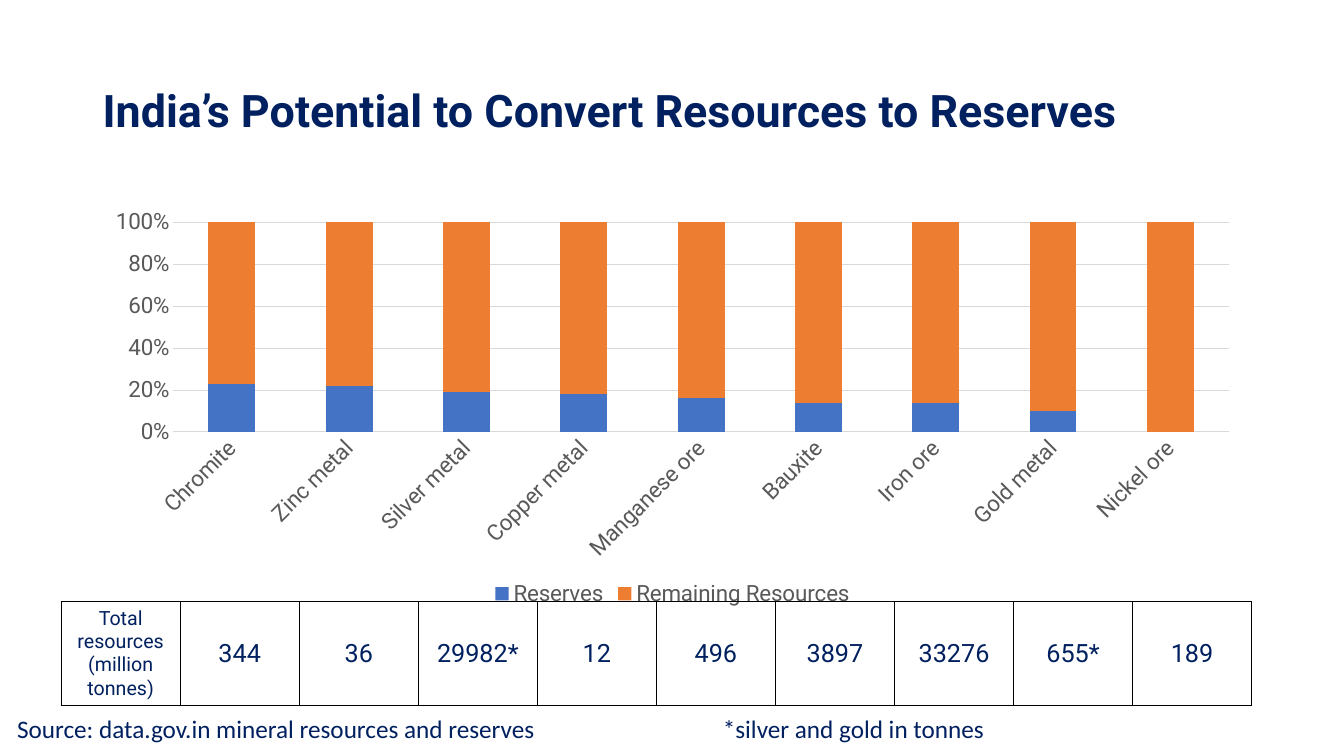
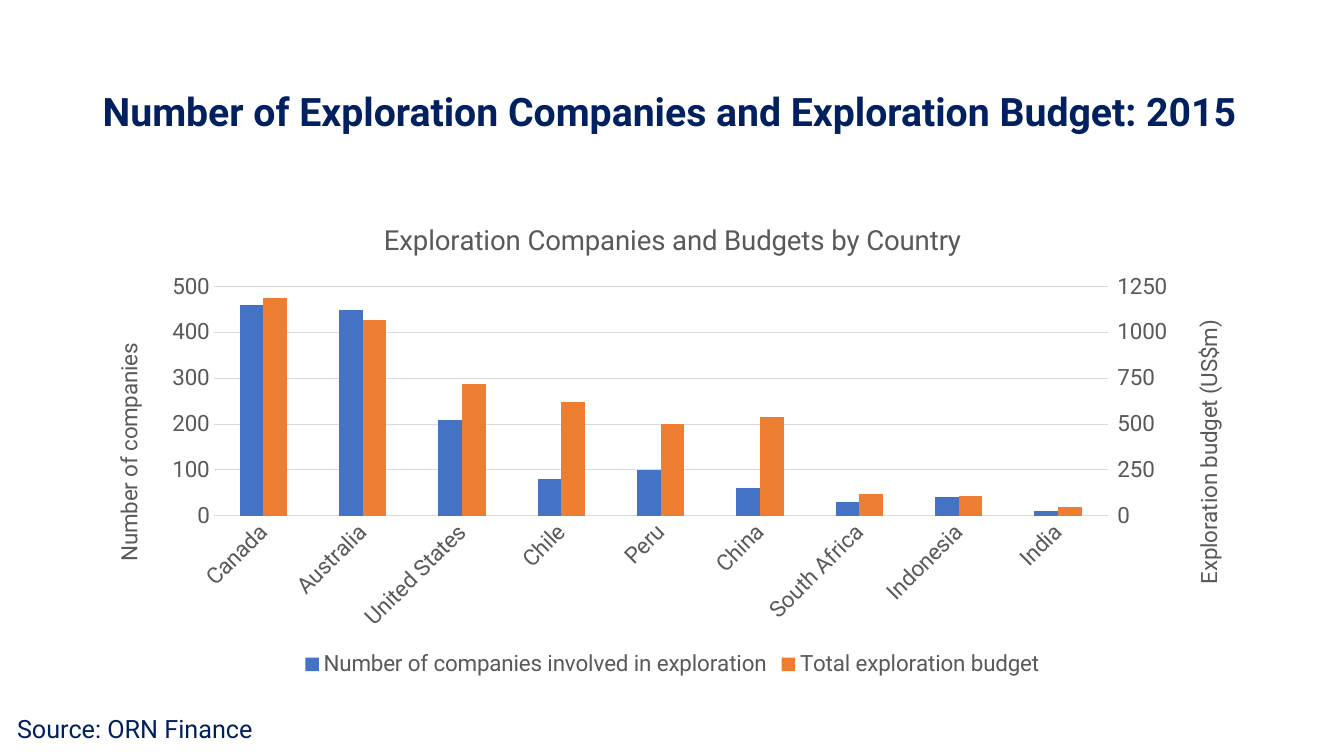
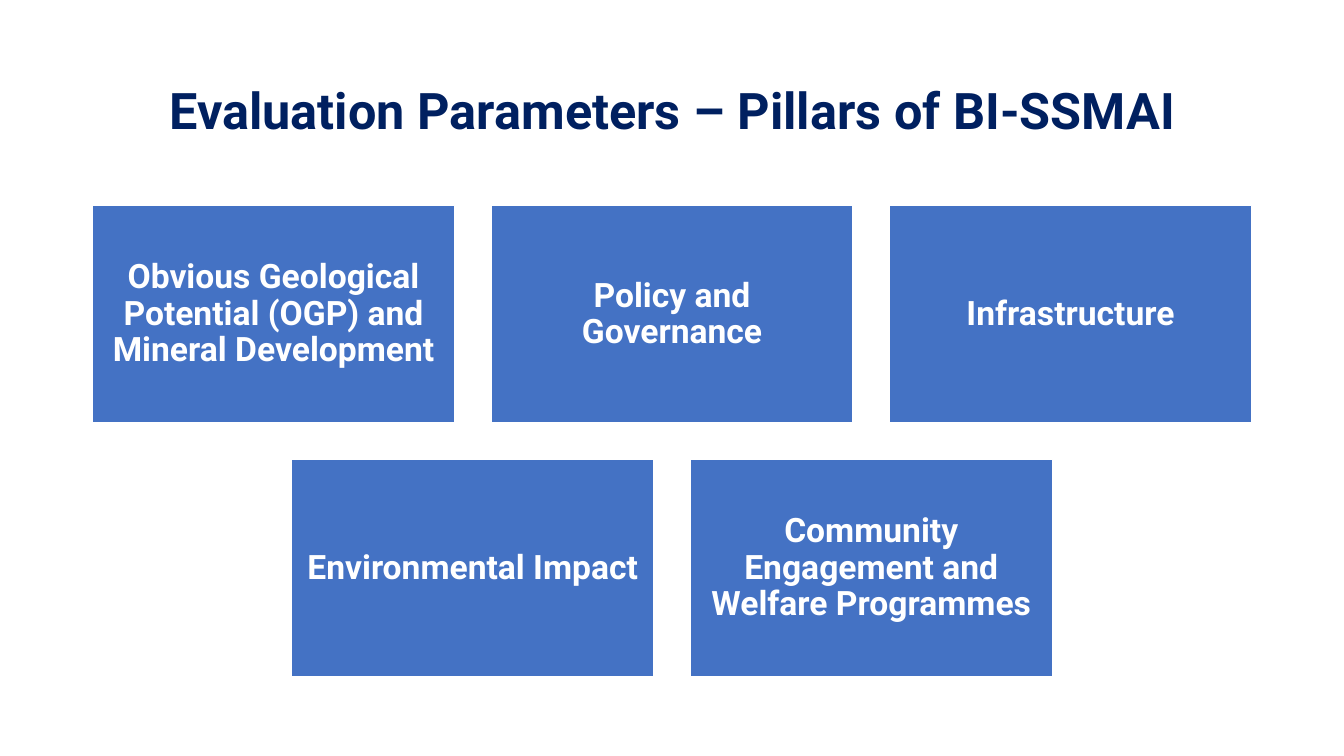
from copy import deepcopy

from pptx import Presentation, util as u
from pptx.chart.axis import ValueAxis
from pptx.chart.data import CategoryChartData
from pptx.dml.color import RGBColor
from pptx.enum import chart as ch, shapes, text
from pptx.oxml import parse_xml
from pptx.oxml.ns import nsdecls

WIDE, HIGH = u.Inches(13.33), u.Inches(7.5)
SIDE, SPAN = 6.9, 86.27
NAVY, BLUE, AMBER = "002060", "4472C4", "ED7D31"
GREY, RULE, WHITE, BLACK = "595959", "D9D9D9", "FFFFFF", "000000"
FACE = "Roboto"
MID = text.PP_ALIGN.CENTER


def rgb(code):
    """Turn a hex string into a colour."""
    return RGBColor.from_string(code)


def area(x, y, w, h):
    """Turn percent shares of the slide into left, top, width and height."""
    return [int(v * full / 100) for v, full in zip((x, y, w, h), (WIDE, HIGH) * 2)]


def style(font, size, code=NAVY, bold=False, face=FACE):
    """Set size, colour, weight and face of a font."""
    font.size, font.bold, font.name = u.Pt(size), bold, face
    font.color.rgb = rgb(code)


def write(frame, words, size, align=None, lines=None, **look):
    """Fill a text frame with one vertically centred paragraph."""
    frame.word_wrap = True
    frame.vertical_anchor = text.MSO_ANCHOR.MIDDLE
    frame.text = words
    para = frame.paragraphs[0]
    para.alignment, para.line_spacing = align, lines
    for run in para.runs:
        style(run.font, size, **look)


def head(slide, words, size, align=None):
    """Add the slide title."""
    box = slide.shapes.add_textbox(*area(SIDE, 5.33, SPAN, 19.33))
    write(box.text_frame, words, size, align, 0.9, bold=True)


def source(slide, words, width, face=FACE, stop=None):
    """Add the source line, with a tab stop in inches if given."""
    box = slide.shapes.add_textbox(*area(0.53, 93.7, width, 5.33))
    write(box.text_frame, words, 18, face=face)
    if stop:
        tabs = parse_xml(f'<a:tabLst {nsdecls("a")}><a:tab pos="{u.Inches(stop)}" algn="l"/></a:tabLst>')
        box.text_frame.paragraphs[0]._p.get_or_add_pPr().append(tabs)


def name(axis, words):
    """Give an axis its title."""
    frame = axis.axis_title.text_frame
    frame.text = words
    style(frame.paragraphs[0].runs[0].font, 16, GREY)


def scale(axis, top, step):
    """Set the range and step of a value axis."""
    axis.minimum_scale, axis.maximum_scale, axis.major_unit = 0, top, step


def columns(slide, kind, height, cats, series, gap, overlap):
    """Add a column chart from (name, values, colour) series."""
    data = CategoryChartData()
    data.categories = cats
    for label, vals, _ in series:
        data.add_series(label, vals)
    chart = slide.shapes.add_chart(kind, *area(SIDE, 26.67, SPAN, height), data).chart
    style(chart.font, 16, GREY)
    chart.has_title = False
    chart.has_legend = True
    chart.legend.position = ch.XL_LEGEND_POSITION.BOTTOM
    chart.legend.include_in_layout = False
    style(chart.legend.font, 16, GREY)
    plot = chart.plots[0]
    plot.gap_width, plot.overlap, plot.vary_by_categories = gap, overlap, False
    for item, (_, _, code) in zip(plot.series, series):
        item.format.fill.solid()
        item.format.fill.fore_color.rgb = rgb(code)
    cat, val = chart.category_axis, chart.value_axis
    for axis in (cat, val):
        axis.major_tick_mark = axis.minor_tick_mark = ch.XL_TICK_MARK.NONE
        style(axis.tick_labels.font, 16, GREY)
    for line in (cat.format.line, val.major_gridlines.format.line):
        line.color.rgb, line.width = rgb(RULE), u.Pt(0.75)
    val.format.line.fill.background()
    chart.element.xpath(".//c:catAx/c:txPr/a:bodyPr")[0].set("rot", "-2700000")
    return chart


def split(chart, count):
    """Move the series after the first few to a right axis and return it."""
    bar, cat, val = (chart.element.xpath(f".//c:{tag}")[0] for tag in ("barChart", "catAx", "valAx"))
    twin, under, right = deepcopy(bar), deepcopy(cat), deepcopy(val)
    bar.addnext(twin)
    val.addnext(right)
    right.addnext(under)
    for ser in bar.xpath("c:ser")[count:]:
        bar.remove(ser)
    for ser in twin.xpath("c:ser")[:count]:
        twin.remove(ser)
    for part in (twin, under, right):
        for node in part.xpath("c:axId | c:crossAx"):
            node.set("val", str(int(node.get("val")) + 1))
    under.xpath("c:delete")[0].set("val", "1")
    right.xpath("c:axPos")[0].set("val", "r")
    right.xpath("c:crosses")[0].set("val", "max")
    axis = ValueAxis(right)
    axis.has_major_gridlines = False
    axis.major_tick_mark = ch.XL_TICK_MARK.OUTSIDE
    return axis


def mute(chart, *spots):
    """Leave the series at these places out of the legend."""
    for spot in reversed(spots):
        entry = f'<c:legendEntry {nsdecls("c")}><c:idx val="{spot}"/><c:delete val="1"/></c:legendEntry>'
        chart.element.xpath(".//c:legendPos")[0].addnext(parse_xml(entry))


def totals(slide, label, vals):
    """Add the one-row table of totals."""
    spot = area(4.55, 79.55, 88.6, 13.73)
    table = slide.shapes.add_table(1, len(vals) + 1, *spot).table
    table.first_row = table.horz_banding = False
    for at, (cell, words) in enumerate(zip(table.rows[0].cells, [label, *vals])):
        write(cell.text_frame, words, 18 if at else 14, MID)
        cell.vertical_anchor = text.MSO_ANCHOR.MIDDLE
        for edge in "LRTB":
            cell._tc.get_or_add_tcPr().append(parse_xml(
                f'<a:ln{edge} {nsdecls("a")} w="12700"><a:solidFill>'
                f'<a:srgbClr val="{BLACK}"/></a:solidFill></a:ln{edge}>'))
        cell.fill.background()


def cards(slide, rows):
    """Add rows of equal cards, each row centred on the slide."""
    wide, high, gap, drop = 26.95, 28.75, 2.7, 4.85
    for r, row in enumerate(rows):
        left = 50 - (len(row) * (wide + gap) - gap) / 2
        for c, words in enumerate(row):
            spot = area(left + c * (wide + gap), 27.2 + r * (high + drop), wide, high)
            card = slide.shapes.add_shape(shapes.MSO_SHAPE.RECTANGLE, *spot)
            card.shadow.inherit = False
            card.fill.solid()
            card.fill.fore_color.rgb = rgb(BLUE)
            card.line.color.rgb, card.line.width = rgb(WHITE), u.Pt(1)
            frame = card.text_frame
            frame.margin_top = frame.margin_bottom = u.Inches(0.1)
            write(frame, words, 24, MID, 0.9, code=WHITE, bold=True)


def reserves(slide):
    """Build the slide on resources and reserves."""
    head(slide, "India’s Potential to Convert Resources to Reserves", 32)
    cats = ["Chromite", "Zinc metal", "Silver metal", "Copper metal", "Manganese ore",
            "Bauxite", "Iron ore", "Gold metal", "Nickel ore"]
    series = [("Reserves", [23, 22, 19, 18, 16, 14, 14, 10, 0], BLUE),
              ("Remaining Resources", [77, 78, 81, 82, 84, 86, 86, 90, 100], AMBER)]
    chart = columns(slide, ch.XL_CHART_TYPE.COLUMN_STACKED_100, 54.13, cats, series, 150, 100)
    chart.value_axis.major_unit = 0.2
    labels = chart.value_axis.tick_labels
    labels.number_format, labels.number_format_is_linked = "0%", False
    source(slide, "Source: data.gov.in mineral resources and reserves\t*silver and gold in tonnes",
           74.19, "Calibri", 7)
    totals(slide, "Total resources (million tonnes)",
           ["344", "36", "29982*", "12", "496", "3897", "33276", "655*", "189"])


def budgets(slide):
    """Build the slide on exploration companies and budgets."""
    head(slide, "Number of Exploration Companies and Exploration Budget: 2015", 28)
    cats = ["Canada", "Australia", "United States", "Chile", "Peru", "China",
            "South Africa", "Indonesia", "India"]
    blank = [None] * len(cats)
    series = [("Number of companies involved in exploration",
               [460, 450, 210, 80, 100, 60, 30, 40, 10], BLUE),
              ("Series 2", blank, AMBER), ("Series 3", blank, "A5A5A5"),
              ("Total exploration budget", [1190, 1070, 720, 620, 500, 540, 120, 110, 50], AMBER)]
    chart = columns(slide, ch.XL_CHART_TYPE.COLUMN_CLUSTERED, 63.47, cats, series, 219, 0)
    title = chart.chart_title.text_frame
    title.text = "Exploration Companies and Budgets by Country"
    style(title.paragraphs[0].runs[0].font, 19.7, GREY)
    left = chart.value_axis
    right = split(chart, 2)
    scale(left, 500, 100)
    scale(right, 1250, 250)
    name(left, "Number of companies")
    name(right, "Exploration budget (US$m)")
    for body in chart.element.xpath(".//c:valAx/c:title//a:bodyPr"):
        body.set("rot", "-5400000")
    mute(chart, 1, 2)
    source(slide, "Source: ORN Finance", 19.43)


def pillars(slide):
    """Build the slide on evaluation parameters."""
    head(slide, "Evaluation Parameters – Pillars of BI-SSMAI", 36, MID)
    cards(slide, [["Obvious Geological Potential (OGP) and Mineral Development",
                   "Policy and Governance", "Infrastructure"],
                  ["Environmental Impact", "Community Engagement and Welfare Programmes"]])


def main():
    """Build and save the deck."""
    deck = Presentation()
    deck.slide_width, deck.slide_height = WIDE, HIGH
    for build in (reserves, budgets, pillars):
        build(deck.slides.add_slide(deck.slide_layouts[6]))
    deck.save("out.pptx")


if __name__ == "__main__":
    main()
